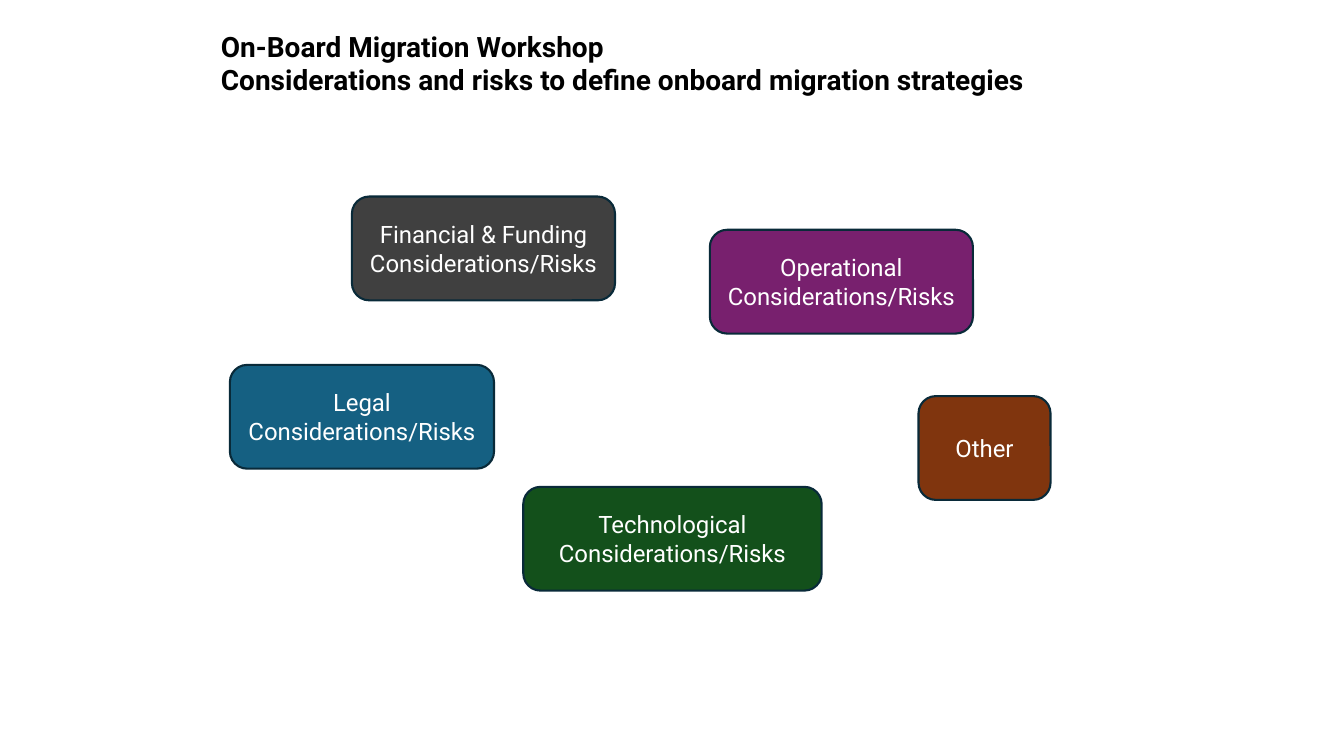
import pptx
import pptx.dml.color
import pptx.enum.shapes
import pptx.enum.text
import pptx.util

Inches = pptx.util.Inches
TITLE_LINES = [
    "On-Board Migration Workshop",
    "Considerations and risks to define onboard migration strategies",
]
BOX_HEIGHT = 1.03
TOPICS = [
    (2.28, 3.62, 2.62, "156082", ["Legal Considerations/Risks"]),
    (3.49, 1.95, 2.61, "404040", ["Financial & Funding Considerations/Risks"]),
    (5.19, 4.83, 2.96, "13501B", ["Technological", "Considerations/Risks"]),
    (7.04, 2.28, 2.61, "78206E", ["Operational", "Considerations/Risks"]),
    (9.11, 3.93, 1.31, "80350E", ["Other"]),
]


def colour(hex_value):
    """Return the colour for a hex string."""
    return pptx.dml.color.RGBColor.from_string(hex_value)


def set_values(target, values):
    """Set each attribute named in a dict of format values."""
    for name, value in values.items():
        setattr(target, name, value)


def write_text(shape, lines, alignment, anchor, size, hex_value, bold):
    """Write one formatted paragraph per line into a shape."""
    frame = shape.text_frame
    set_values(frame, {
        "word_wrap": True,
        "auto_size": pptx.enum.text.MSO_AUTO_SIZE.NONE,
        "vertical_anchor": anchor,
        "margin_left": Inches(0.07),
        "margin_right": Inches(0.07),
        "margin_top": Inches(0.04),
        "margin_bottom": Inches(0.04),
    })
    for index, line in enumerate(lines):
        para = frame.add_paragraph() if index else frame.paragraphs[0]
        para.alignment = alignment
        para.space_before = pptx.util.Pt(0)
        span = para.add_run()
        span.text = line
        set_values(span.font, {
            "name": "Roboto", "size": pptx.util.Pt(size), "bold": bold,
        })
        span.font.color.rgb = colour(hex_value)


def place_title(slide):
    """Move the title placeholder and write the heading in it."""
    title = slide.shapes.title
    set_values(title, {
        "left": Inches(2.12), "top": Inches(0.25),
        "width": Inches(8.54), "height": Inches(0.75),
    })
    write_text(title, TITLE_LINES, pptx.enum.text.PP_ALIGN.LEFT,
               pptx.enum.text.MSO_ANCHOR.TOP, 20, "000000", True)


def add_topic(slide, left, top, width, fill, lines):
    """Add a rounded box that names one group of considerations."""
    box = slide.shapes.add_shape(
        pptx.enum.shapes.MSO_SHAPE.ROUNDED_RECTANGLE,
        Inches(left), Inches(top), Inches(width), Inches(BOX_HEIGHT))
    box.shadow.inherit = False
    box.fill.solid()
    box.fill.fore_color.rgb = colour(fill)
    box.line.color.rgb = colour("092A39")
    box.line.width = pptx.util.Pt(1.5)
    write_text(box, lines, pptx.enum.text.PP_ALIGN.CENTER,
               pptx.enum.text.MSO_ANCHOR.MIDDLE, 17.1, "FFFFFF", False)


def main():
    """Build the workshop slide and save it."""
    deck = pptx.Presentation()
    set_values(deck, {
        "slide_width": Inches(13.33), "slide_height": Inches(7.5),
    })
    slide = deck.slides.add_slide(deck.slide_layouts[5])
    place_title(slide)
    for topic in TOPICS:
        add_topic(slide, *topic)
    deck.save("out.pptx")


if __name__ == "__main__":
    main()
